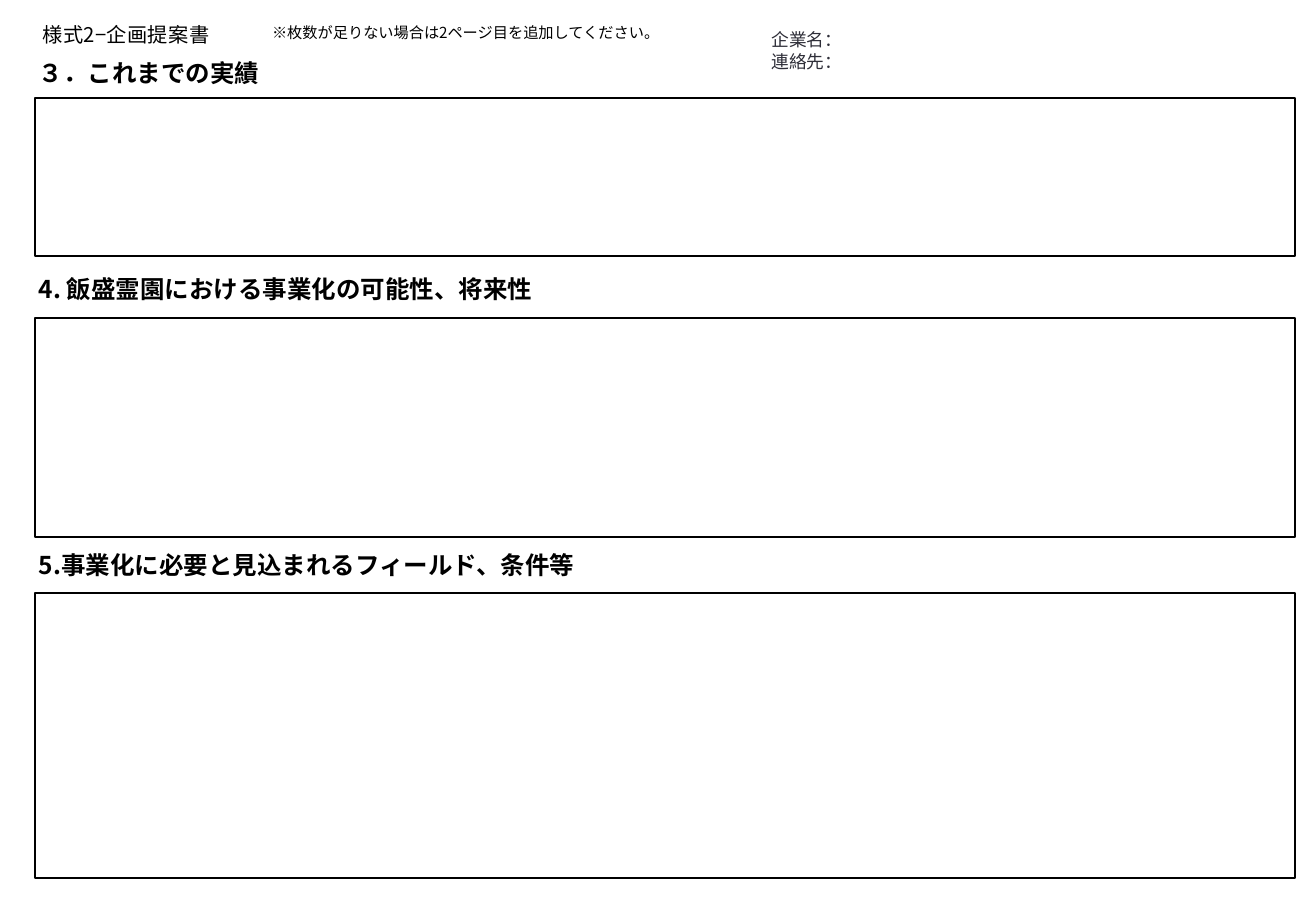
"""Build the second page of a proposal form with three answer frames."""
from lxml import etree
from pptx import Presentation
from pptx.dml.color import RGBColor
from pptx.enum.shapes import MSO_SHAPE
from pptx.enum.text import MSO_ANCHOR, PP_ALIGN
from pptx.oxml.ns import qn
from pptx.util import Pt

EMU_PER_PX = 9144
RECTANGLE = MSO_SHAPE.RECTANGLE
MIDDLE = MSO_ANCHOR.MIDDLE
LEFT = PP_ALIGN.LEFT
FONT = "Noto Sans CJK JP"
BLACK = RGBColor(0x00, 0x00, 0x00)
WHITE = RGBColor(0xFF, 0xFF, 0xFF)
SLATE = RGBColor(0x2E, 0x2E, 0x38)

MARGIN = 29
FRAME_WIDTH = 1037
HEADING_INSETS = (3, 3, 3, 3)
SECTIONS = [
    ("３．これまでの実績", (46, 404, 28), (81, 130)),
    ("4. 飯盛霊園における事業化の可能性、将来性", (222, 432, 31), (262, 180)),
    ("5.事業化に必要と見込まれるフィールド、条件等", (451, 927, 28), (488, 235)),
]


def px(length):
    """Turn pixels into EMU."""
    return length * EMU_PER_PX


def add_span(para, text, size, color, bold=False, spacing=None):
    """Add one run in the form's font."""
    span = para.add_run()
    span.text = text
    font = span.font
    font.size = Pt(size)
    font.bold = bold
    font.color.rgb = color
    font.name = FONT
    properties = font._element if hasattr(font, "_element") else span._r.get_or_add_rPr()
    etree.SubElement(properties, qn("a:ea")).set("typeface", FONT)
    if spacing is not None:
        properties.set("spc", str(spacing))


def fill_text(shape, lines, insets, size, color=BLACK, wrap=True, **style):
    """Write lines as left-aligned, vertically centred paragraphs."""
    frame = shape.text_frame
    frame.word_wrap = wrap
    frame.vertical_anchor = MIDDLE
    (frame.margin_left, frame.margin_top,
     frame.margin_right, frame.margin_bottom) = map(px, insets)
    for index, line in enumerate(lines):
        para = frame.add_paragraph() if index else frame.paragraphs[0]
        para.alignment = LEFT
        add_span(para, line, size, color, **style)


def add_text(page, place, lines, insets, size, **style):
    """Add a text box."""
    box = page.shapes.add_textbox(*map(px, place))
    fill_text(box, lines, insets, size, **style)


def add_rectangle(page, place):
    """Add a rectangle without shadow."""
    box = page.shapes.add_shape(RECTANGLE, *map(px, place))
    box.shadow.inherit = False
    return box


def add_title(page):
    """Add the white title bar."""
    bar = add_rectangle(page, (23, 16, 534, 24))
    bar.fill.solid()
    bar.fill.fore_color.rgb = WHITE
    bar.line.fill.background()
    fill_text(bar, ["様式2−企画提案書"], (12, 0, 0, 0), 12, spacing=20)


def add_section(page, heading, heading_place, frame_place):
    """Add a heading and the empty answer frame below it."""
    add_text(page, (MARGIN, *heading_place), [heading], HEADING_INSETS, 14.5, bold=True)
    top, height = frame_place
    frame = add_rectangle(page, (MARGIN, top, FRAME_WIDTH, height))
    frame.fill.background()
    frame.line.color.rgb = BLACK
    frame.line.width = Pt(1)


def main():
    """Build and save the form page."""
    deck = Presentation()
    deck.slide_width, deck.slide_height = px(1083), px(750)
    page = deck.slides.add_slide(deck.slide_layouts[6])
    add_title(page)
    add_text(page, (625, 16, 441, 51), ["企業名：", "連絡先："],
             (10, 5, 10, 5), 10.5, color=SLATE)
    add_text(page, (214, 14, 355, 25),
             ["※枚数が足りない場合は2ページ目を追加してください。"],
             (10, 0, 10, 0), 9, wrap=False)
    for section in SECTIONS:
        add_section(page, *section)
    deck.save("out.pptx")


if __name__ == "__main__":
    main()
